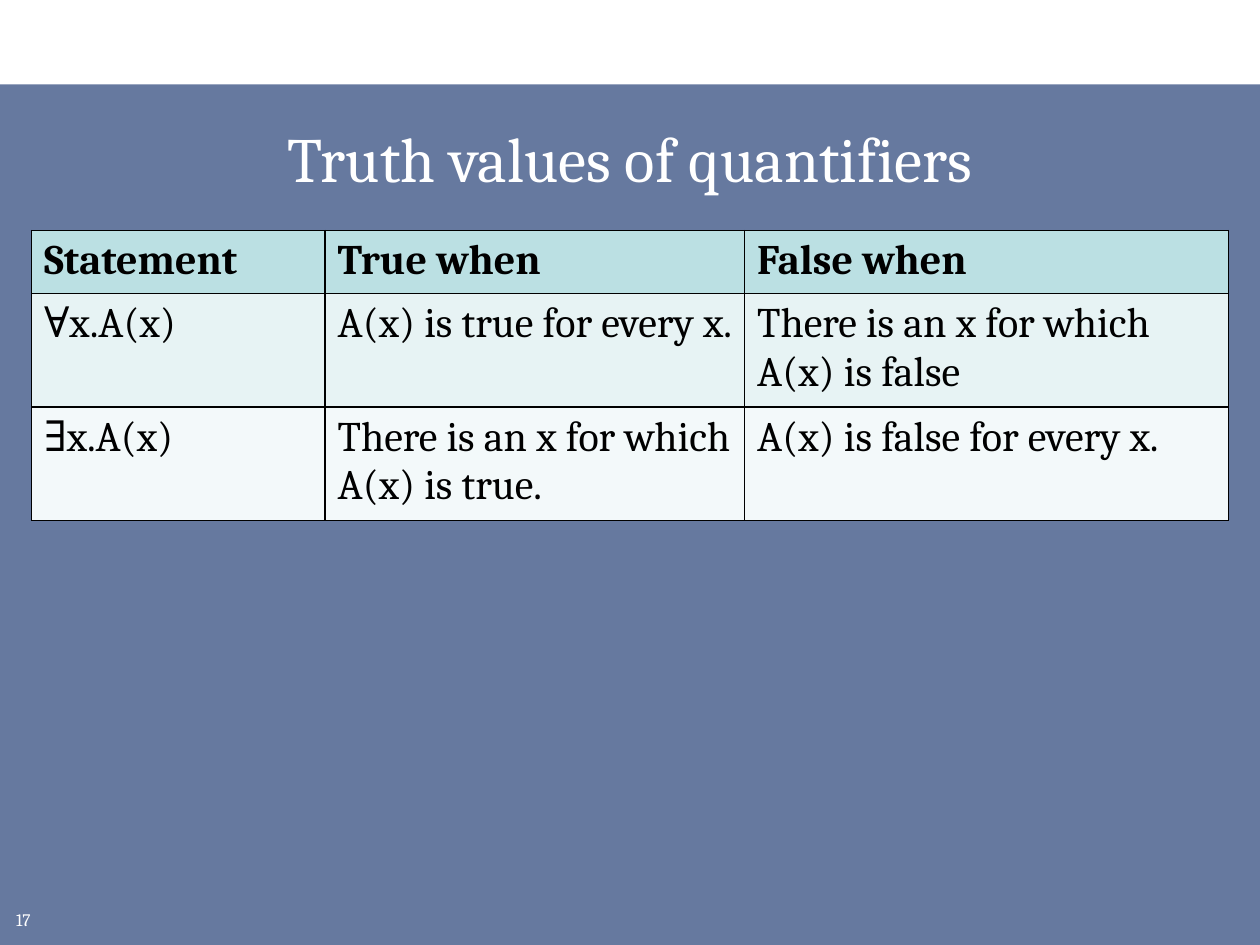
from dataclasses import dataclass

from lxml import etree
from pptx import Presentation
from pptx.dml.color import RGBColor
from pptx.enum.shapes import MSO_SHAPE
from pptx.enum.text import MSO_ANCHOR, PP_ALIGN
from pptx.oxml.ns import qn
from pptx.util import Inches, Pt

RECTANGLE = MSO_SHAPE.RECTANGLE
MIDDLE = MSO_ANCHOR.MIDDLE
TOP = MSO_ANCHOR.TOP
CENTER = PP_ALIGN.CENTER
LEFT = PP_ALIGN.LEFT

FONT = "Cambria"
COLORS = {
    "navy": "002060",
    "white": "FFFFFF",
    "black": "000000",
    "header": "BBE0E3",
    "odd": "E7F3F4",
    "even": "F3F9FA",
}


@dataclass
class Box:
    left: float
    top: float
    width: float
    height: float

    def emu(self) -> tuple:
        return tuple(Inches(v) for v in (self.left, self.top, self.width, self.height))


@dataclass
class Row:
    texts: tuple
    fill: str
    height: float
    bold: bool = False


COLUMNS = (2.33, 3.33, 3.84)
ROWS = (
    Row(("Statement", "True when", "False when"), "header", 0.48, True),
    Row(("∀x.A(x)", "A(x) is true for every x.",
         "There is an x for which A(x) is false"), "odd", 0.87),
    Row(("∃x.A(x)", "There is an x for which A(x) is true.",
         "A(x) is false for every x."), "even", 0.87),
)


def write(tf, text: str, *, size: float, color: str, bold: bool = False, align=LEFT) -> None:
    tf.word_wrap = True
    p = tf.paragraphs[0]
    p.alignment = align
    r = p.add_run()
    r.text = text
    r.font.name = FONT
    r.font.size = Pt(size)
    r.font.bold = bold
    r.font.color.rgb = RGBColor.from_string(COLORS[color])


def add_text(s, box: Box, text: str, **fmt) -> None:
    tf = s.shapes.add_textbox(*box.emu()).text_frame
    tf.vertical_anchor = MIDDLE
    write(tf, text, **fmt)


def add_panel(s, box: Box, color: str, opacity: int) -> None:
    sp = s.shapes.add_shape(RECTANGLE, *box.emu())
    sp.shadow.inherit = False
    sp.line.fill.background()
    sp.fill.solid()
    sp.fill.fore_color.rgb = RGBColor.from_string(COLORS[color])
    clr = sp.fill._xPr.find(f".//{qn('a:srgbClr')}")
    etree.SubElement(clr, qn("a:alpha"), val=str(opacity * 1000))


def set_borders(cell, color: str, width: float) -> None:
    props = cell._tc.get_or_add_tcPr()
    for i, side in enumerate(("lnL", "lnR", "lnT", "lnB")):
        ln = etree.Element(qn(f"a:{side}"), w=str(Pt(width)))
        fill = etree.SubElement(ln, qn("a:solidFill"))
        etree.SubElement(fill, qn("a:srgbClr"), val=COLORS[color])
        props.insert(i, ln)


def add_truth_table(s, left: float, top: float) -> None:
    box = Box(left, top, sum(COLUMNS), sum(row.height for row in ROWS))
    table = s.shapes.add_table(len(ROWS), len(COLUMNS), *box.emu()).table
    for column, width in zip(table.columns, COLUMNS):
        column.width = Inches(width)
    for i, row in enumerate(ROWS):
        table.rows[i].height = Inches(row.height)
        for cell, text in zip(table.rows[i].cells, row.texts):
            cell.fill.solid()
            cell.fill.fore_color.rgb = RGBColor.from_string(COLORS[row.fill])
            cell.vertical_anchor = TOP
            set_borders(cell, "black", 1)
            write(cell.text_frame, text, size=24, color="black", bold=row.bold)


def main() -> None:
    prs = Presentation()
    prs.slide_width, prs.slide_height = Inches(10), Inches(7.5)
    s = prs.slides.add_slide(prs.slide_layouts[6])
    add_panel(s, Box(0, 0.67, 10, 6.83), "navy", 60)
    add_text(s, Box(0.03, 7.17, 0.39, 0.25), "17", size=10, color="white")
    add_text(s, Box(0.25, 0.83, 9.5, 0.83), "Truth values of quantifiers",
             size=36, color="white", align=CENTER)
    add_truth_table(s, 0.25, 1.83)
    prs.save("out.pptx")


if __name__ == "__main__":
    main()
